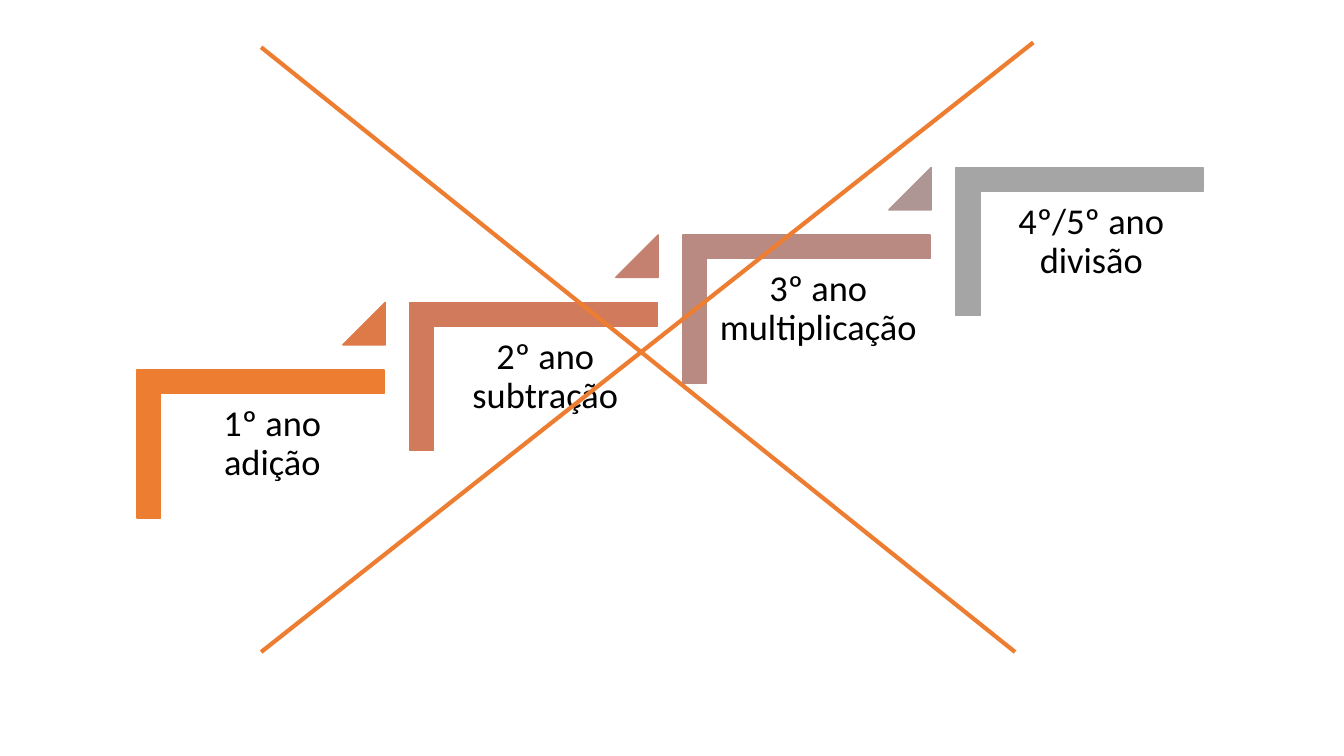
"""Build a slide of four rising school-year steps, crossed out by two lines."""
from pptx import Presentation
from pptx.dml.color import RGBColor
from pptx.enum.shapes import MSO_CONNECTOR, MSO_SHAPE
from pptx.enum.text import MSO_ANCHOR, PP_ALIGN
from pptx.oxml.ns import qn
from pptx.util import Cm, Pt

CORNER = MSO_SHAPE.CORNER
WEDGE = MSO_SHAPE.ISOSCELES_TRIANGLE
LINE = MSO_CONNECTOR.STRAIGHT
TOP = MSO_ANCHOR.TOP
CENTER = PP_ALIGN.CENTER

BLACK = RGBColor(0x00, 0x00, 0x00)
ORANGE = RGBColor(0xED, 0x7D, 0x31)
AMBER = RGBColor(0xDE, 0x7A, 0x47)
CORAL = RGBColor(0xD1, 0x7B, 0x5C)
CLAY = RGBColor(0xC4, 0x81, 0x70)
ROSE = RGBColor(0xB9, 0x8A, 0x82)
MAUVE = RGBColor(0xAE, 0x96, 0x94)
GRAY = RGBColor(0xA5, 0xA5, 0xA5)

STEPS = [
    ("1º ano adição", ORANGE, AMBER),
    ("2º ano subtração", CORAL, CLAY),
    ("3º ano multiplicação", ROSE, MAUVE),
    ("4º/5º ano divisão", GRAY, None),
]
RUN, RISE = 6.88, 1.7
CROSS = [(6.58, 1.19, 25.58, 16.43), (26.04, 1.07, 6.58, 16.43)]


def add_part(group, kind, box, color):
    """Add a plain shape with fill and outline in one colour."""
    part = group.shapes.add_shape(kind, *map(Cm, box))
    part.shadow.inherit = False
    part.fill.solid()
    part.fill.fore_color.rgb = color
    part.line.color.rgb = color
    part.line.width = Pt(1)
    return part


deck = Presentation()
deck.slide_width, deck.slide_height = Cm(33.87), Cm(19.05)
slide = deck.slides.add_slide(deck.slide_layouts[6])

stairs = slide.shapes.add_group_shape()
for i, (label, color, accent) in enumerate(STEPS):
    x, y = i * RUN, -i * RISE

    corner = add_part(stairs, CORNER, (4.7 + x, 8.08 + y, 3.73, 6.22), color)
    corner.rotation = 90
    corner.adjustments[0] = corner.adjustments[1] = 0.16

    box = stairs.shapes.add_textbox(Cm(4.06 + x), Cm(9.93 + y), Cm(5.61), Cm(4.93))
    frame = box.text_frame
    frame.word_wrap = True
    frame.vertical_anchor = TOP
    frame.margin_left = frame.margin_right = Cm(0.28)
    frame.margin_top = frame.margin_bottom = Cm(0.28)
    para = frame.paragraphs[0]
    para.alignment = CENTER
    para.line_spacing = 0.9
    run = para.add_run()
    run.text = label
    run.font.name = "Calibri"
    run.font.size = Pt(26)
    run.font.color.rgb = BLACK

    if accent:
        wedge = add_part(stairs, WEDGE, (8.64 + x, 7.62 + y, 1.07, 1.07), accent)
        wedge.adjustments[0] = 1

cross = slide.shapes.add_group_shape()
for ends in CROSS:
    stroke = cross.shapes.add_connector(LINE, *map(Cm, ends))
    stroke.line.color.rgb = ORANGE
    stroke.line.width = Pt(3)
    props = stroke.element.spPr
    props.append(props.makeelement(qn("a:effectLst"), {}))

deck.save("out.pptx")
